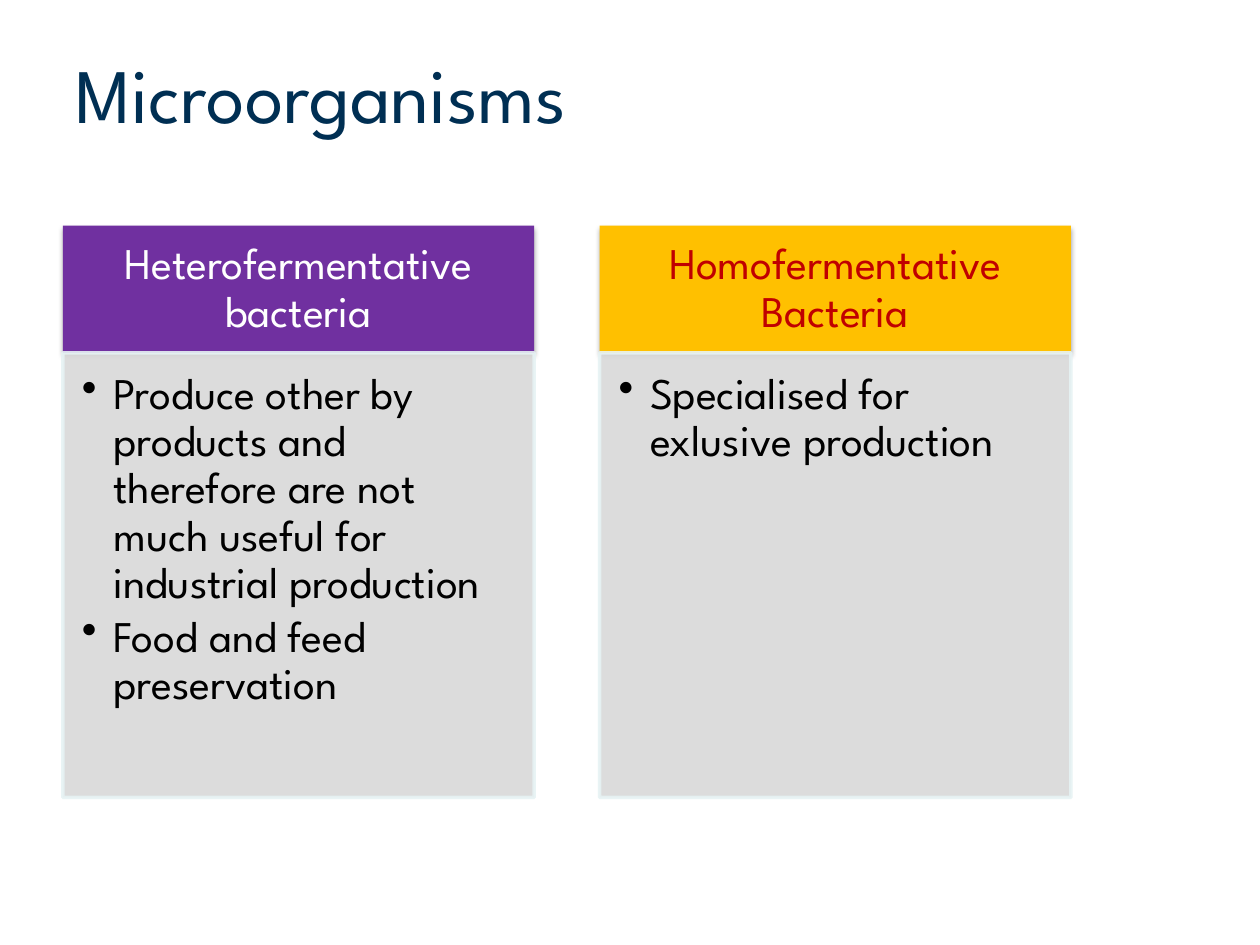
"""Build a slide comparing heterofermentative and homofermentative bacteria."""
from dataclasses import dataclass

from lxml import etree
from pptx import Presentation
from pptx.dml.color import RGBColor
from pptx.enum.shapes import MSO_SHAPE
from pptx.enum.text import MSO_ANCHOR, PP_ALIGN
from pptx.oxml.ns import qn
from pptx.util import Inches, Pt

RECTANGLE = MSO_SHAPE.RECTANGLE
LEFT, CENTER = PP_ALIGN.LEFT, PP_ALIGN.CENTER
TOP, MIDDLE = MSO_ANCHOR.TOP, MSO_ANCHOR.MIDDLE
FONT = "League Spartan"
TITLE_ONLY = 5
COLUMN_LEFT, COLUMN_WIDTH, COLUMN_STEP = 0.5, 3.74, 4.26
HEADING_TOP, HEADING_HEIGHT = 1.79, 1.01
BODY_TOP, BODY_HEIGHT = HEADING_TOP + HEADING_HEIGHT, 3.53


@dataclass
class Group:
    heading: str
    fill: str
    heading_color: str
    points: list[str]


GROUPS = [
    Group("Heterofermentative bacteria", "7030A0", "FFFFFF", [
        "Produce other by products and therefore are not much useful "
        "for industrial production",
        "Food and feed preservation",
    ]),
    Group("Homofermentative Bacteria", "FFC000", "C00000", [
        "Specialised for exlusive production",
    ]),
]


def rgb(value: str) -> RGBColor:
    return RGBColor.from_string(value)


def add_run(paragraph, text: str, size: float, color: str) -> None:
    run = paragraph.add_run()
    run.text = text
    run.font.name = FONT
    run.font.size = Pt(size)
    run.font.color.rgb = rgb(color)


def add_panel(slide, left: float, top: float, height: float, fill: str,
              insets: tuple, anchor):
    panel = slide.shapes.add_shape(
        RECTANGLE, Inches(left), Inches(top), Inches(COLUMN_WIDTH), Inches(height))
    panel.shadow.inherit = False
    panel.fill.solid()
    panel.fill.fore_color.rgb = rgb(fill)
    frame = panel.text_frame
    frame.word_wrap = True
    frame.vertical_anchor = anchor
    frame.margin_left, frame.margin_top, frame.margin_right, frame.margin_bottom = (
        Inches(inset) for inset in insets)
    return panel


def add_shadow(shape) -> None:
    effects = shape._element.spPr.find(qn("a:effectLst"))
    shadow = etree.SubElement(
        effects, qn("a:outerShdw"), blurRad=str(Pt(3.1)), dist=str(Pt(1.8)),
        dir="5400000", rotWithShape="0")
    color = etree.SubElement(shadow, qn("a:srgbClr"), val="000000")
    etree.SubElement(color, qn("a:alpha"), val="35000")


def soften_colors(shape) -> None:
    for color in shape._element.spPr.iter(qn("a:srgbClr")):
        etree.SubElement(color, qn("a:alpha"), val="90000")


def add_bullet(paragraph) -> None:
    properties = paragraph._p.get_or_add_pPr()
    properties.set("marL", str(Inches(0.25)))
    properties.set("indent", str(Inches(-0.25)))
    etree.SubElement(properties, qn("a:buChar"), char="•")


def add_heading(slide, left: float, group: Group) -> None:
    heading = add_panel(slide, left, HEADING_TOP, HEADING_HEIGHT, group.fill,
                        (0.19, 0.11, 0.19, 0.11), MIDDLE)
    heading.line.fill.background()
    add_shadow(heading)
    paragraph = heading.text_frame.paragraphs[0]
    paragraph.alignment = CENTER
    paragraph.line_spacing = 0.9
    add_run(paragraph, group.heading, 25, group.heading_color)


def add_body(slide, left: float, group: Group) -> None:
    body = add_panel(slide, left, BODY_TOP, BODY_HEIGHT, "D9D9D9",
                     (0.15, 0.15, 0.19, 0.22), TOP)
    body.line.color.rgb = rgb("E7F3F4")
    body.line.width = Pt(2)
    soften_colors(body)
    frame = body.text_frame
    for index, point in enumerate(group.points):
        paragraph = frame.add_paragraph() if index else frame.paragraphs[0]
        add_bullet(paragraph)
        paragraph.level = 1
        paragraph.alignment = LEFT
        paragraph.line_spacing = 0.9
        paragraph.space_after = Pt(3.75)
        add_run(paragraph, point, 25, "000000")


def add_title(slide, text: str) -> None:
    title = slide.shapes.title
    title.left, title.top = Inches(0.5), Inches(0.3)
    title.width, title.height = Inches(9), Inches(0.87)
    title.text_frame.vertical_anchor = MIDDLE
    paragraph = title.text_frame.paragraphs[0]
    paragraph.alignment = LEFT
    add_run(paragraph, text, 44, "002F53")


def main() -> None:
    presentation = Presentation()
    presentation.slide_width = Inches(10)
    presentation.slide_height = Inches(7.5)
    slide = presentation.slides.add_slide(presentation.slide_layouts[TITLE_ONLY])
    add_title(slide, "Microorganisms")
    for index, group in enumerate(GROUPS):
        left = COLUMN_LEFT + index * COLUMN_STEP
        add_heading(slide, left, group)
        add_body(slide, left, group)
    presentation.save("out.pptx")


if __name__ == "__main__":
    main()
